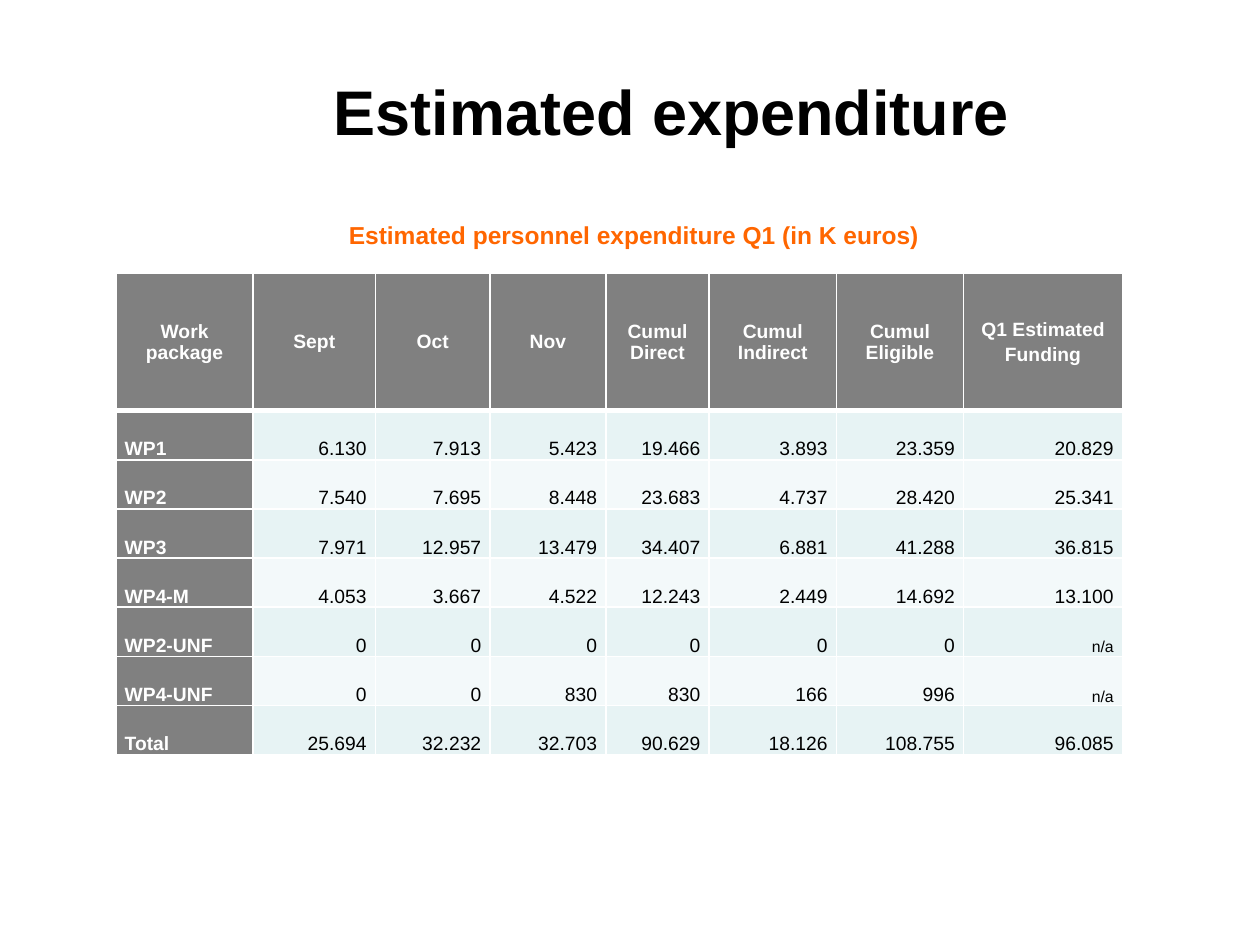
from dataclasses import dataclass

from pptx import Presentation
from pptx.dml.color import RGBColor
from pptx.enum import text
from pptx.oxml import parse_xml
from pptx.oxml.ns import nsdecls
from pptx.util import Inches, Pt


@dataclass(frozen=True)
class Theme:
    font: str = "Arial"
    ink: str = "000000"
    white: str = "FFFFFF"
    accent: str = "FF6600"
    header: str = "808080"
    bands: tuple = ("E7F3F4", "F3F9FA")
    title: int = 36
    caption: int = 14
    cell: int = 11
    note: int = 9


T = Theme()
ALIGN, ANCHOR = text.PP_ALIGN, text.MSO_ANCHOR


def write(tf, content, size, color, bold=False, align=ALIGN.LEFT, gap=0):
    """Fill a text frame, one paragraph per line, gap points apart."""
    for i, line in enumerate(content.split("\n")):
        p = tf.paragraphs[0] if i == 0 else tf.add_paragraph()
        p.alignment = align
        if i:
            p.space_before = Pt(gap)
        r = p.add_run()
        r.text = line
        r.font.name, r.font.size, r.font.bold = T.font, Pt(size), bold
        r.font.color.rgb = RGBColor.from_string(color)


def add_borders(cell, bottom):
    """Draw 1 pt white cell borders, with the bottom one as thick as asked."""
    tc_pr = cell._tc.get_or_add_tcPr()
    for side, width in (("L", 1), ("R", 1), ("T", 1), ("B", bottom)):
        tc_pr.append(parse_xml(
            f'<a:ln{side} {nsdecls("a")} w="{Pt(width)}"><a:solidFill>'
            f'<a:srgbClr val="{T.white}"/></a:solidFill></a:ln{side}>'))


HEADINGS = ["Work package", "Sept", "Oct", "Nov", "Cumul Direct",
            "Cumul Indirect", "Cumul Eligible", "Q1 Estimated\nFunding"]
EXPENDITURE = [
    ["WP1", "6.130", "7.913", "5.423", "19.466", "3.893", "23.359", "20.829"],
    ["WP2", "7.540", "7.695", "8.448", "23.683", "4.737", "28.420", "25.341"],
    ["WP3", "7.971", "12.957", "13.479", "34.407", "6.881", "41.288", "36.815"],
    ["WP4-M", "4.053", "3.667", "4.522", "12.243", "2.449", "14.692", "13.100"],
    ["WP2-UNF", "0", "0", "0", "0", "0", "0", "n/a"],
    ["WP4-UNF", "0", "0", "830", "830", "166", "996", "n/a"],
    ["Total", "25.694", "32.232", "32.703", "90.629", "18.126", "108.755", "96.085"],
]
COLUMN_WIDTHS = [1.09, 0.97, 0.91, 0.92, 0.82, 1.01, 1.01, 1.26]
HEADER_HEIGHT, ROW_HEIGHT = 1.09, 0.39

prs = Presentation()
prs.slide_width, prs.slide_height = Inches(10), Inches(7.5)
s = prs.slides.add_slide(prs.slide_layouts[5])

# Title
title = s.shapes.title
title.left, title.top = Inches(0.83), Inches(0.25)
title.width, title.height = Inches(9), Inches(1.25)
title.text_frame.vertical_anchor = ANCHOR.MIDDLE
write(title.text_frame, "Estimated expenditure", T.title, T.ink,
      bold=True, align=ALIGN.CENTER)

# Expenditure table
rows = [HEADINGS] + EXPENDITURE
table = s.shapes.add_table(
    len(rows), len(HEADINGS), Inches(0.92), Inches(2.17),
    Inches(sum(COLUMN_WIDTHS)),
    Inches(HEADER_HEIGHT + ROW_HEIGHT * len(EXPENDITURE))).table
for column, width in zip(table.columns, COLUMN_WIDTHS):
    column.width = Inches(width)

for i, row in enumerate(rows):
    table.rows[i].height = Inches(ROW_HEIGHT if i else HEADER_HEIGHT)
    for j, value in enumerate(row):
        cell = table.cell(i, j)
        is_head = i == 0 or j == 0
        add_borders(cell, bottom=1 if i else 3)
        cell.fill.solid()
        cell.fill.fore_color.rgb = RGBColor.from_string(
            T.header if is_head else T.bands[(i - 1) % 2])
        cell.margin_left = cell.margin_right = Inches(0.07)
        cell.margin_top = cell.margin_bottom = 0
        cell.vertical_anchor = ANCHOR.BOTTOM if i else ANCHOR.MIDDLE
        align = ALIGN.CENTER if i == 0 else ALIGN.RIGHT if j else ALIGN.LEFT
        write(cell.text_frame, value, T.note if value == "n/a" else T.cell,
              T.white if is_head else T.ink, bold=is_head, align=align, gap=2)

# Table caption
caption = s.shapes.add_textbox(Inches(2.67), Inches(1.7), Inches(5.03), Inches(0.34))
caption.text_frame.word_wrap = True
caption.text_frame.auto_size = text.MSO_AUTO_SIZE.SHAPE_TO_FIT_TEXT
write(caption.text_frame, "Estimated personnel expenditure Q1 (in K euros)",
      T.caption, T.accent, bold=True)

prs.save("out.pptx")
